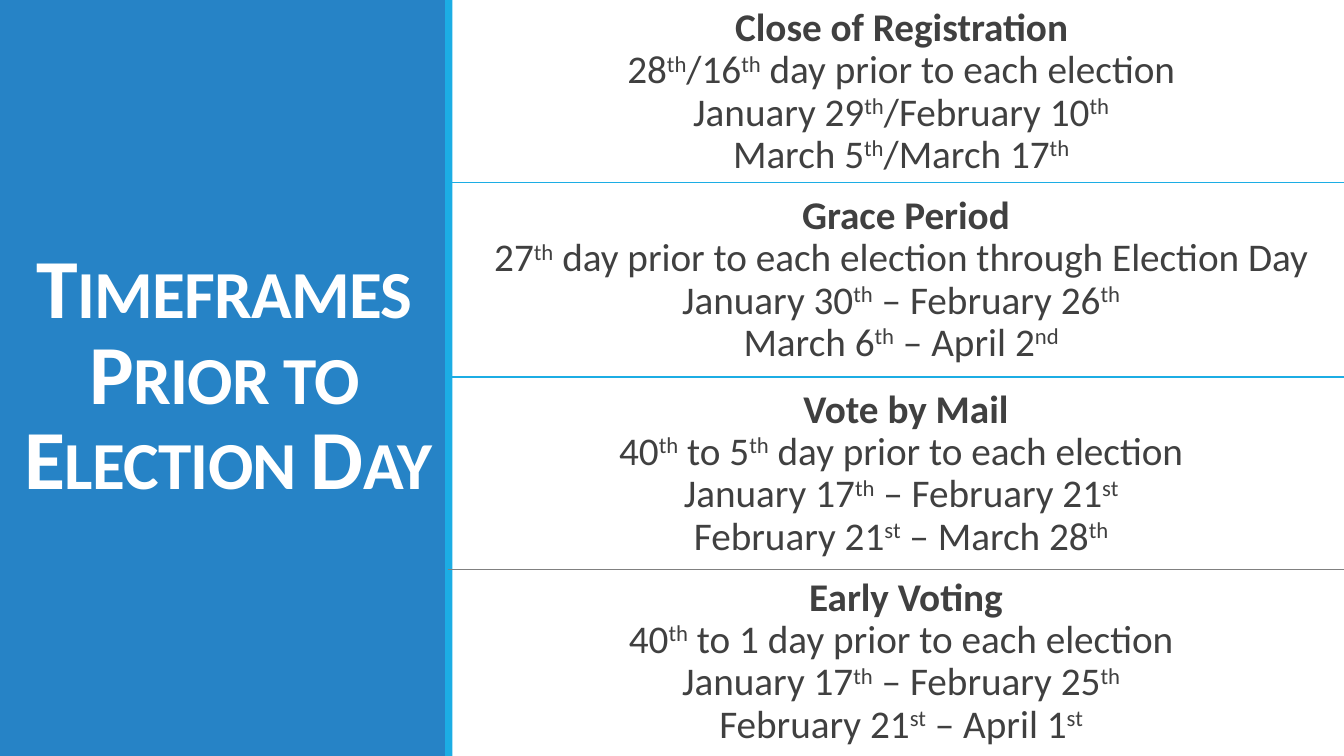
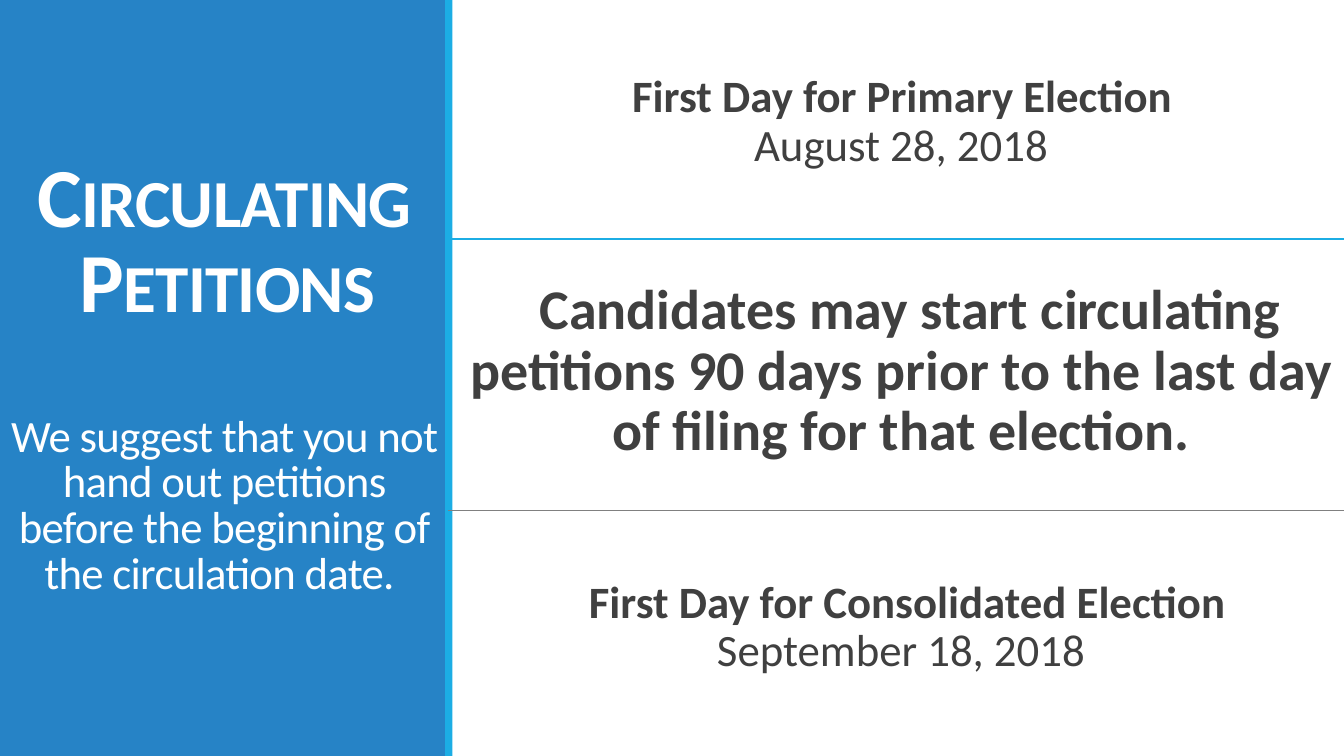
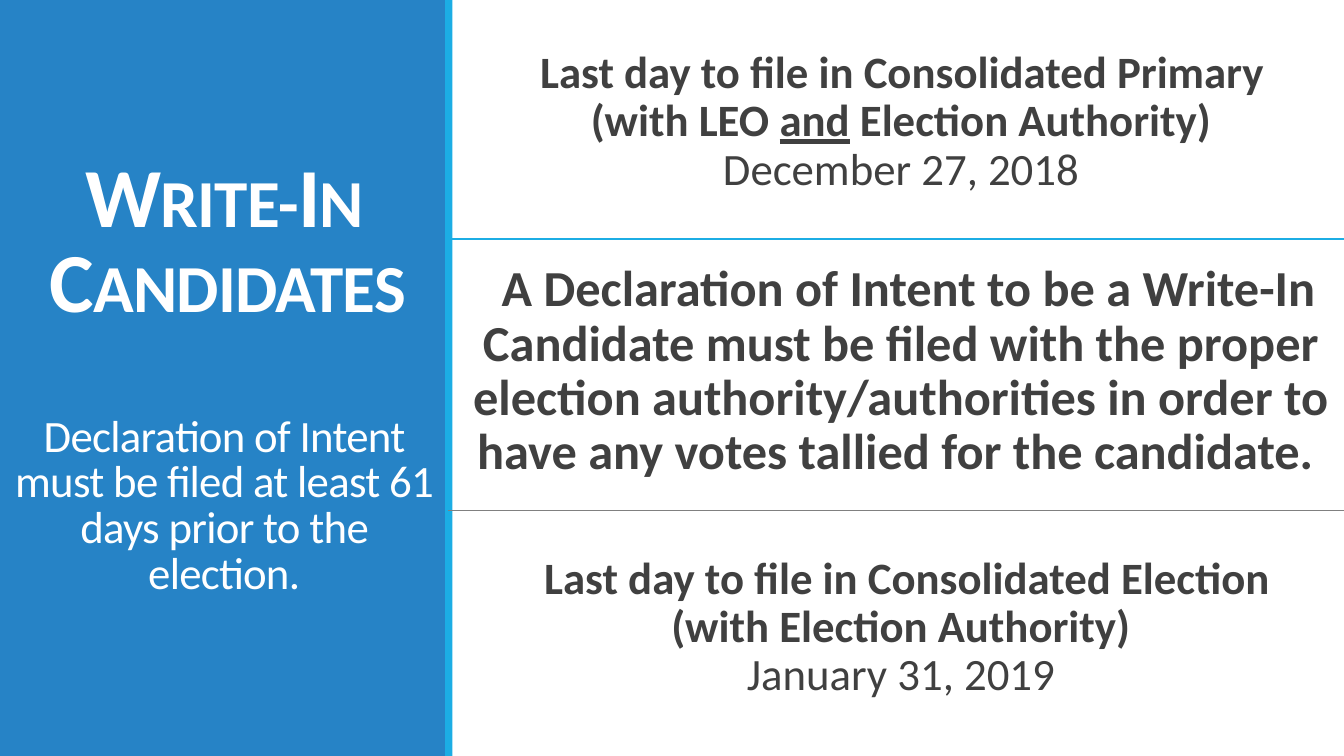
from lxml.etree import SubElement
from pptx import Presentation
from pptx.dml.color import RGBColor
from pptx.enum.shapes import MSO_CONNECTOR, MSO_SHAPE
from pptx.enum.text import MSO_ANCHOR, MSO_AUTO_SIZE, PP_ALIGN
from pptx.oxml.ns import qn
from pptx.util import Cm, Pt

FONT = "Calibri"
BLUE, CYAN, GRAY, DARK, WHITE = "2683C6", "1CADE4", "808080", "404040", "FFFFFF"
SLIDE_WIDTH, SLIDE_HEIGHT = 33.87, 19.05
PANEL_WIDTH = 11.3
CONTENT_WIDTH = SLIDE_WIDTH - PANEL_WIDTH
UNDERLINE, SUPERSCRIPT = "_", "^"

FOUR_ROWS = {
    "rows": [(0, 4.65), (4.65, 4.83), (9.53, 4.83), (14.35, 4.67)],
    "dividers": [4.6, 9.5, 14.35],
}
THREE_ROWS = {
    "rows": [(0.76, 4.65), (6.96, 4.83), (13.41, 4.83)],
    "dividers": [6.02, 12.85],
}

SLIDES = [
    {
        "title": "Timeframes Prior to Election Day",
        "note": "",
        "grid": FOUR_ROWS,
        "blocks": [
            (28, ["Close of Registration"],
             ["28^th^/16^th^ day prior to each election",
              "January 29^th^/February 10^th^",
              "March 5^th^/March 17^th^"]),
            (28, ["Grace Period"],
             ["27^th^ day prior to each election through Election Day",
              "January 30^th^ – February 26^th^",
              "March 6^th^ – April 2^nd^"]),
            (28, ["Vote by Mail"],
             ["40^th^ to 5^th^ day prior to each election",
              "January 17^th^ – February 21^st^",
              "February 21^st^ – March 28^th^"]),
            (28, ["Early Voting"],
             ["40^th^ to 1 day prior to each election",
              "January 17^th^ – February 25^th^",
              "February 21^st^ – April 1^st^"]),
        ],
    },
    {
        "title": "Circulating Petitions",
        "note": "We suggest that you not hand out petitions before the beginning "
                "of the circulation date. ",
        "grid": THREE_ROWS,
        "blocks": [
            (32, ["First Day for Primary Election"], ["August 28, 2018"]),
            (40, ["Candidates may start circulating petitions 90 days prior to "
                  "the last day of filing for that election."], []),
            (32, ["First Day for Consolidated Election"], ["September 18, 2018"]),
        ],
    },
    {
        "title": "Write-In Candidates",
        "note": "Declaration of Intent must be filed at least 61 days prior to "
                "the election.",
        "grid": THREE_ROWS,
        "blocks": [
            (32, ["Last day to file in Consolidated Primary",
                  "(with LEO _and_ Election Authority)"], ["December 27, 2018"]),
            (36, ["A Declaration of Intent to be a Write-In Candidate must be "
                  "filed with the proper election authority/authorities in order "
                  "to have any votes tallied for the candidate. "], []),
            (32, ["Last day to file in Consolidated Election",
                  "(with Election Authority)"], ["January 31, 2019"]),
        ],
    },
]


def color(value):
    return RGBColor.from_string(value)


def place(shape, left, top, width, height):
    shape.left, shape.top = Cm(left), Cm(top)
    shape.width, shape.height = Cm(width), Cm(height)


def prepare_frame(frame):
    frame.word_wrap = True
    frame.auto_size = MSO_AUTO_SIZE.NONE
    frame.vertical_anchor = MSO_ANCHOR.MIDDLE


def style_paragraph(paragraph, size, value, spacing):
    paragraph.alignment = PP_ALIGN.CENTER
    paragraph.line_spacing = spacing
    paragraph.font.name = FONT
    paragraph.font.size = Pt(size)
    paragraph.font.color.rgb = color(value)


def add_band(slide, layout, left, width, fill):
    band = slide.shapes.add_shape(
        MSO_SHAPE.RECTANGLE, Cm(left), 0, Cm(width), Cm(SLIDE_HEIGHT))
    band.shadow.inherit = False
    band.fill.solid()
    band.fill.fore_color.rgb = color(fill)
    band.line.fill.background()
    layout.shapes.element.insert(2 + (left > 0), band.element)


def add_title_run(paragraph, text, caps):
    run = paragraph.add_run()
    run.text = text
    properties = run._r.get_or_add_rPr()
    properties.set("spc", "-50")
    properties.set("cap", caps)
    return run


def fill_title(title, heading, note):
    place(title, 0, 0.84, PANEL_WIDTH, 17.4)
    prepare_frame(title.text_frame)
    paragraph = title.text_frame.paragraphs[0]
    style_paragraph(paragraph, 60, WHITE, 0.85)
    paragraph.font.bold = True
    add_title_run(paragraph, heading, "small")
    if note:
        paragraph.add_line_break()
        paragraph.add_line_break()
        note_run = add_title_run(paragraph, note, "none")
        note_run.font.size = Pt(32)
        note_run.font.bold = False


def add_blank_bullet(paragraph):
    properties = paragraph._p.get_or_add_pPr()
    properties.set("marL", str(Cm(0.25)))
    properties.set("indent", str(-Cm(0.25)))
    bullet_color = SubElement(properties, qn("a:buClr"))
    SubElement(bullet_color, qn("a:srgbClr"), val=CYAN)
    SubElement(properties, qn("a:buChar"), char=" ")


def add_marked_line(paragraph, text, bold):
    marker = UNDERLINE if bold else SUPERSCRIPT
    for position, part in enumerate(text.split(marker)):
        if not part:
            continue
        run = paragraph.add_run()
        run.text = part
        run.font.bold = bold
        if position % 2 and bold:
            run.font.underline = True
        elif position % 2:
            run._r.get_or_add_rPr().set("baseline", "30000")


def fill_block(box, size, headings, details):
    frame = box.text_frame
    prepare_frame(frame)
    frame.margin_left = frame.margin_right = 0
    paragraph = frame.paragraphs[0]
    add_blank_bullet(paragraph)
    style_paragraph(paragraph, size, DARK, 0.9)
    paragraph.space_before, paragraph.space_after = Pt(12), Pt(2)
    for position, text in enumerate(headings + details):
        if position:
            paragraph.add_line_break()
        add_marked_line(paragraph, text, position < len(headings))


def add_divider(slide, top, value, width):
    divider = slide.shapes.add_connector(
        MSO_CONNECTOR.STRAIGHT, Cm(PANEL_WIDTH), Cm(top), Cm(SLIDE_WIDTH), Cm(top))
    divider.line.color.rgb = color(value)
    divider.line.width = Pt(width)
    SubElement(divider.element.spPr, qn("a:effectLst"))


def build_slide(slide, content):
    fill_title(slide.shapes.title, content["title"], content["note"])
    *upper_dividers, last_divider = content["grid"]["dividers"]
    for top in upper_dividers:
        add_divider(slide, top, CYAN, 1)
    add_divider(slide, last_divider, GRAY, 0.5)
    for position, (row, block) in enumerate(
            zip(content["grid"]["rows"], content["blocks"])):
        box = slide.shapes.add_textbox(0, 0, 0, 0) if position else slide.placeholders[1]
        place(box, PANEL_WIDTH, row[0], CONTENT_WIDTH, row[1])
        fill_block(box, *block)


def main():
    presentation = Presentation()
    presentation.slide_width = Cm(SLIDE_WIDTH)
    presentation.slide_height = Cm(SLIDE_HEIGHT)
    layout = presentation.slide_layouts[1]
    slides = [presentation.slides.add_slide(layout) for _ in SLIDES]
    add_band(slides[0], layout, 0, 11.25, BLUE)
    add_band(slides[0], layout, 11.22, 0.18, CYAN)
    for slide, content in zip(slides, SLIDES):
        build_slide(slide, content)
    presentation.save("out.pptx")


if __name__ == "__main__":
    main()
